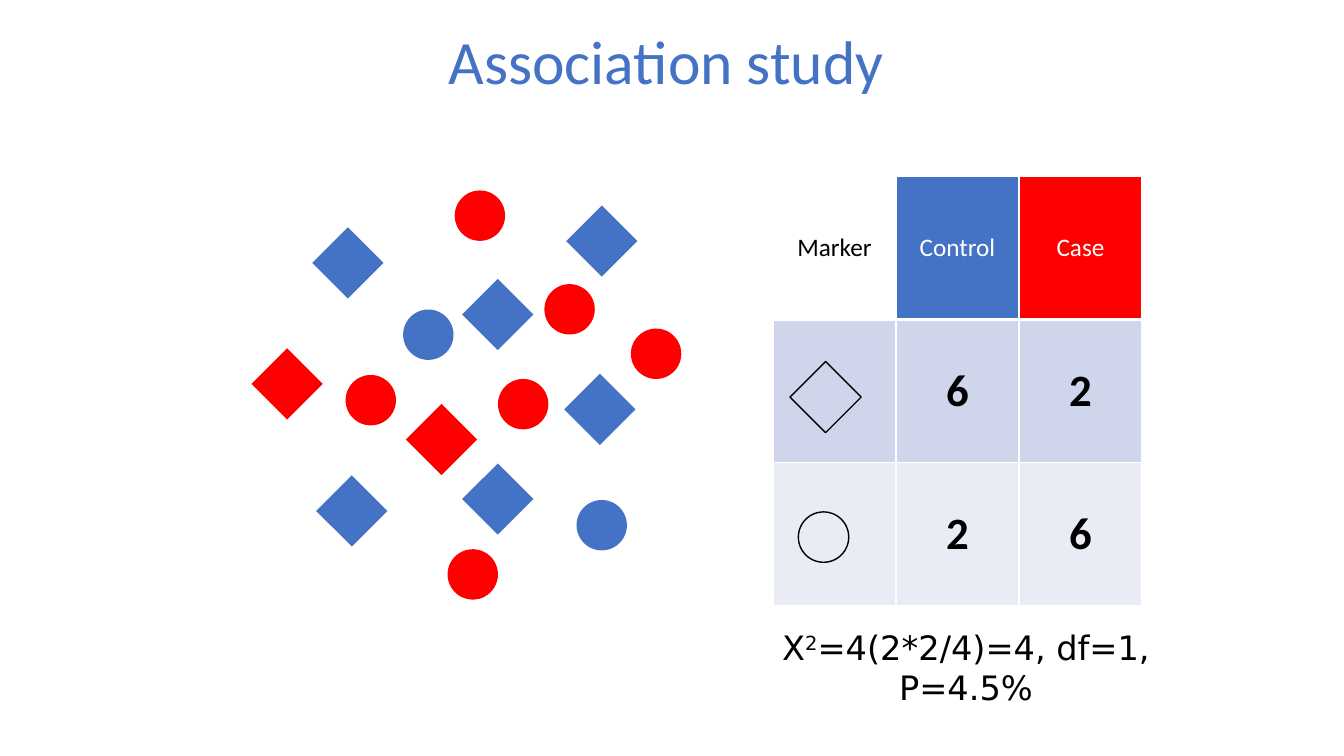
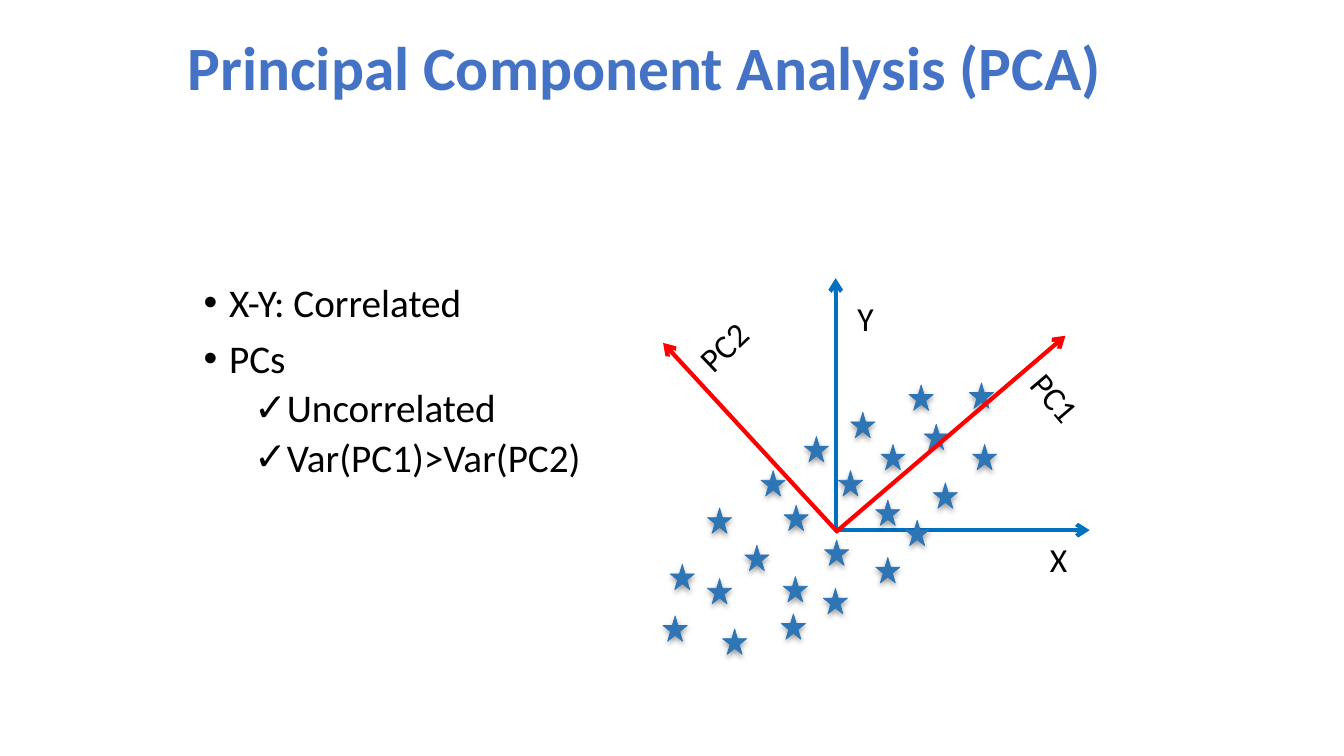
from dataclasses import dataclass

from lxml.etree import SubElement
from pptx import Presentation
from pptx.dml.color import RGBColor
from pptx.enum.shapes import MSO_CONNECTOR as Connector, MSO_SHAPE as Preset
from pptx.enum.text import MSO_ANCHOR as Anchor, MSO_AUTO_SIZE as AutoSize, PP_ALIGN as Align
from pptx.oxml.ns import qn
from pptx.util import Cm, Pt


@dataclass(frozen=True)
class Theme:
    font: str = "Calibri"
    formula_font: str = "DejaVu Sans"
    title_size: int = 44
    count_size: int = 32
    body_size: int = 28
    label_size: int = 24
    header_size: int = 18
    title: str = "4472C4"
    control: str = "4472C4"
    case: str = "FF0000"
    ink: str = "000000"
    paper: str = "FFFFFF"
    bands: tuple = ("CFD5EA", "E9EBF5")
    axis: str = "0070C0"
    component: str = "FF0000"
    star: str = "2E75B6"


THEME = Theme()
MARKER_SIZE = 1.27
DIAMOND, CIRCLE = (Preset.RECTANGLE, 135), (Preset.OVAL, 0)

CONTROL_DIAMONDS = [(14.53, 5.44), (14.48, 9.68), (8.23, 12.24),
                    (8.13, 5.99), (11.91, 11.94), (11.91, 7.29)]
CASE_DIAMONDS = [(10.49, 10.44), (6.6, 9.04)]
CONTROL_CIRCLES = [(14.53, 12.6), (10.16, 7.8)]
CASE_CIRCLES = [(11.28, 13.84), (12.55, 9.55), (11.46, 4.8),
                (13.72, 7.16), (8.71, 9.45), (15.9, 8.28)]

STARS = [
    (17.83, 12.8), (18.77, 13.74), (19.18, 11.86), (22.2, 11.2),
    (22.07, 14.05), (20.78, 13.61), (16.71, 15.52), (24.43, 9.65),
    (22.81, 13.11), (23.52, 12.17), (24.51, 11.2), (19.76, 12.73),
    (21.44, 10.39), (20.75, 14.83), (16.89, 14.22), (20.27, 11),
    (21.13, 11.86), (18.21, 15.85), (22.07, 12.6), (23.29, 10.69),
    (22.91, 9.7), (17.83, 14.58), (19.69, 15.47), (19.74, 14.53),
]


def rgb(color):
    return RGBColor.from_string(color)


def write(para, text, *, size, color=THEME.ink, font=THEME.font, bold=False,
          align=None, raised=False):
    if align is not None:
        para.alignment = align
    span = para.add_run()
    span.text = text
    span.font.size = Pt(size)
    span.font.name = font
    span.font.bold = bold
    span.font.color.rgb = rgb(color)
    if raised:
        span.font._element.set("baseline", "30000")


def place(item, left, top, width, height):
    item.left, item.top = Cm(left), Cm(top)
    item.width, item.height = Cm(width), Cm(height)


def set_title(page, text, bounds, *, bold=False, align=Align.CENTER):
    title = page.shapes.title
    place(title, *bounds)
    frame = title.text_frame
    frame.auto_size = AutoSize.NONE
    frame.vertical_anchor = Anchor.MIDDLE
    para = frame.paragraphs[0]
    para.line_spacing = 0.9
    write(para, text, size=THEME.title_size, color=THEME.title, bold=bold, align=align)


def add_text_box(page, bounds, rotation=0):
    box = page.shapes.add_textbox(*map(Cm, bounds))
    box.rotation = rotation
    frame = box.text_frame
    frame.word_wrap = True
    frame.auto_size = AutoSize.SHAPE_TO_FIT_TEXT
    return frame.paragraphs[0]


def add_label(page, text, left, top, rotation=0, align=Align.LEFT):
    para = add_text_box(page, (left, top, 2.62, 1.27), rotation)
    write(para, text, size=THEME.label_size, align=align)


def add_preset(page, preset, bounds, *, fill=None, line=None, line_width=1, rotation=0):
    shape = page.shapes.add_shape(preset, *map(Cm, bounds))
    shape.rotation = rotation
    shape.shadow.inherit = False
    if fill:
        shape.fill.solid()
        shape.fill.fore_color.rgb = rgb(fill)
    else:
        shape.fill.background()
    if line:
        shape.line.color.rgb = rgb(line)
        shape.line.width = Pt(line_width)
    else:
        shape.line.fill.background()
    return shape


def add_marker(page, kind, left, top, **style):
    preset, rotation = kind
    add_preset(page, preset, (left, top, MARKER_SIZE, MARKER_SIZE),
               rotation=rotation, **style)


def add_star(page, left, top):
    star = add_preset(page, Preset.STAR_5_POINT, (left, top, 0.61, 0.64),
                      fill=THEME.star, line=THEME.star, line_width=0.5)
    effects = star._element.spPr.find(qn("a:effectLst"))
    shadow = SubElement(effects, qn("a:outerShdw"), blurRad=str(Pt(4)),
                        dist=str(Pt(2)), dir="5400000", rotWithShape="0")
    color = SubElement(shadow, qn("a:srgbClr"), val=THEME.ink)
    SubElement(color, qn("a:alpha"), val="38000")


def add_arrow(page, start, end, color):
    arrow = page.shapes.add_connector(Connector.STRAIGHT, *map(Cm, start + end))
    arrow.line.color.rgb = rgb(color)
    arrow.line.width = Pt(3)
    SubElement(arrow.line._get_or_add_ln(), qn("a:tailEnd"), type="arrow")
    SubElement(arrow._element.spPr, qn("a:effectLst"))


def format_cell(cell, fill, bottom_width):
    properties = cell._tc.get_or_add_tcPr()
    for side in "LRTB":
        width = bottom_width if side == "B" else 1
        edge = SubElement(properties, qn(f"a:ln{side}"), w=str(Pt(width)))
        paint = SubElement(edge, qn("a:solidFill"))
        SubElement(paint, qn("a:srgbClr"), val=THEME.paper)
    cell.fill.solid()
    cell.fill.fore_color.rgb = rgb(fill)
    cell.vertical_anchor = Anchor.MIDDLE


def add_count_table(page, headers, counts):
    rows, columns = len(counts) + 1, len(headers)
    bounds = (19.48, 4.45, 3.1 * columns, 3.6 * rows)
    table = page.shapes.add_table(rows, columns, *map(Cm, bounds)).table
    for column, (text, fill, color) in enumerate(headers):
        cell = table.cell(0, column)
        format_cell(cell, fill, 3)
        write(cell.text_frame.paragraphs[0], text, size=THEME.header_size,
              color=color, align=Align.CENTER)
    for row, (values, band) in enumerate(zip(counts, THEME.bands), 1):
        for column, value in enumerate(("", *values)):
            cell = table.cell(row, column)
            format_cell(cell, band, 1)
            if value:
                write(cell.text_frame.paragraphs[0], str(value),
                      size=THEME.count_size, bold=True, align=Align.CENTER)


def fill_list(body, bounds, items):
    place(body, *bounds)
    frame = body.text_frame
    frame.auto_size = AutoSize.NONE
    for index, (level, text) in enumerate(items):
        para = frame.add_paragraph() if index else frame.paragraphs[0]
        para.level = level
        para.line_spacing = 0.9
        para.space_before = Pt((10, 5)[level])
        properties = para._p.get_or_add_pPr()
        properties.set("marL", str(Cm((0.64, 1.91)[level])))
        properties.set("indent", str(Cm(-0.64)))
        SubElement(properties, qn("a:buFont"), typeface=("Arial", "Wingdings")[level] if level == 0 else THEME.formula_font)
        SubElement(properties, qn("a:buChar"), char="•✓"[level])
        write(para, text, size=THEME.body_size, align=Align.LEFT)


def build_association(deck):
    page = deck.slides.add_slide(deck.slide_layouts[5])
    set_title(page, "Association study", (5.36, 0.03, 22.86, 3.18))
    groups = [
        (DIAMOND, CONTROL_DIAMONDS, CASE_DIAMONDS),
        (CIRCLE, CONTROL_CIRCLES, CASE_CIRCLES),
    ]
    headers = [
        ("Marker", THEME.paper, THEME.ink),
        ("Control", THEME.control, THEME.paper),
        ("Case", THEME.case, THEME.paper),
    ]
    add_count_table(page, headers, [(len(controls), len(cases))
                                    for _, controls, cases in groups])
    for kind, controls, cases in groups:
        for spots, color in ((controls, THEME.control), (cases, THEME.case)):
            for left, top in spots:
                add_marker(page, kind, left, top, fill=color)
    add_marker(page, DIAMOND, 20.17, 9.37, line=THEME.ink)
    add_marker(page, CIRCLE, 20.12, 12.9, line=THEME.ink)
    para = add_text_box(page, (19.05, 15.67, 10.59, 2.31))
    for text, raised in (("X", False), ("2", True), ("=4(2*2/4)=4, df=1, P=4.5%", False)):
        write(para, text, size=THEME.label_size, font=THEME.formula_font,
              align=Align.CENTER, raised=raised)


def build_components(deck):
    page = deck.slides.add_slide(deck.slide_layouts[1])
    set_title(page, "Principal Component Analysis (PCA)", (4.47, 0.03, 24.49, 3.48),
              bold=True, align=Align.LEFT)
    fill_list(page.placeholders[1], (4.88, 7.01, 10.82, 9.32), [
        (0, "X-Y: Correlated"),
        (0, "PCs"),
        (1, "Uncorrelated"),
        (1, "Var(PC1)>Var(PC2)"),
    ])
    add_arrow(page, (21.11, 13.36), (27.46, 13.36), THEME.axis)
    add_arrow(page, (21.06, 13.36), (21.06, 7.01), THEME.axis)
    for left, top in STARS:
        add_star(page, left, top)
    add_arrow(page, (21.06, 13.41), (26.85, 8.46), THEME.component)
    add_arrow(page, (21.11, 13.41), (16.71, 8.64), THEME.component)
    add_label(page, "X", 25.37, 13.46, align=Align.CENTER)
    add_label(page, "Y", 21.36, 7.37)
    add_label(page, "PC1", 25.55, 9.68, rotation=49.5)
    add_label(page, "PC2", 17.2, 7.82, rotation=316.3)


def main():
    deck = Presentation()
    deck.slide_width, deck.slide_height = Cm(33.87), Cm(19.05)
    build_association(deck)
    build_components(deck)
    deck.save("out.pptx")


if __name__ == "__main__":
    main()
